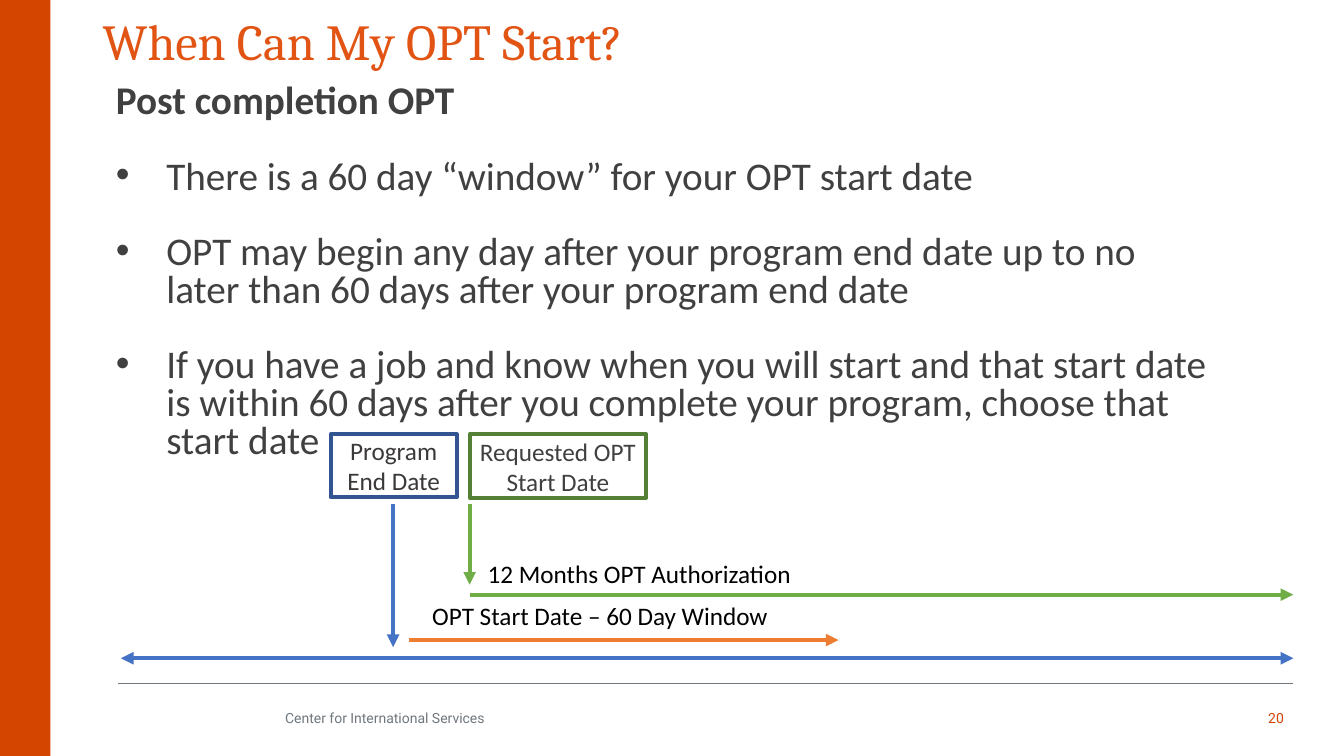
from dataclasses import dataclass

from lxml.etree import SubElement
from pptx import Presentation
from pptx.dml.color import RGBColor
from pptx.enum.shapes import MSO_CONNECTOR, MSO_SHAPE
from pptx.enum.text import MSO_ANCHOR, MSO_AUTO_SIZE, PP_ALIGN
from pptx.oxml.ns import qn
from pptx.util import Pt

HUES = {
    "band": "D44500", "title": "E25414", "ink": "404040", "dark": "3B3838",
    "gray": "6F777D", "black": "000000", "blue": "4472C4", "navy": "325491",
    "orange": "ED7D31", "green": "70AD47", "moss": "538035",
}


@dataclass
class Line:
    start: tuple[float, float]
    end: tuple[float, float]
    hue: str
    width: float = 3
    ends: tuple[str, ...] = ("tailEnd",)


@dataclass
class Box:
    area: tuple[float, float, float, float]
    text: str
    edge: str
    hue: str


@dataclass
class Label:
    area: tuple[float, float, float, float]
    text: str
    size: float = 18
    font: str = "Calibri"
    hue: str = "black"
    align: PP_ALIGN = PP_ALIGN.LEFT
    anchor: MSO_ANCHOR = MSO_ANCHOR.TOP


LIST = [
    "There is a 60 day “window” for your OPT start date",
    "OPT may begin any day after your program end date up to no later than "
    "60 days after your program end date",
    "If you have a job and know when you will start and that start date is "
    "within 60 days after you complete your program, choose that start date",
]
LEFT, RIGHT, OPT = 86.4, 923.8, 335.5
LINES = [
    Line((84.2, 488.2), (RIGHT, 488.2), "gray", 0.5, ()),
    Line((LEFT, 470.2), (RIGHT, 470.2), "blue", ends=("headEnd", "tailEnd")),
    Line((280.8, 360), (280.8, 462.2), "blue"),
    Line((292.3, 457.2), (599, 457.2), "orange"),
    Line((OPT, 360), (OPT, 417.6), "green"),
    Line((OPT, 424.8), (RIGHT, 424.8), "green"),
]
BOXES = [
    Box((236.2, 310.3, 90, 44.8), "Program End Date", "navy", "dark"),
    Box((OPT, 310.3, 126, 45.3), "Requested OPT Start Date", "moss", "ink"),
]
LABELS = [
    Label((301.7, 425.5, 288, 29), "OPT Start Date – 60 Day Window"),
    Label((341.3, 395.3, 343, 29), "12 Months OPT Authorization"),
    Label((196.6, 498.2, 679.7, 28.8), "Center for International Services",
          10, "Roboto", "gray", anchor=MSO_ANCHOR.MIDDLE),
    Label((876.2, 498.2, 48, 28.8), "20", 10, "Roboto", "band",
          PP_ALIGN.RIGHT, MSO_ANCHOR.MIDDLE),
]


def tint(name: str) -> RGBColor:
    return RGBColor.from_string(HUES[name])


def write(para, text: str, *, size: float, hue: str, font: str = "Calibri",
          bold: bool = False, align=PP_ALIGN.LEFT, lead: float = 1,
          before: float = 0, bullet: bool | None = None) -> None:
    """Fill a paragraph; bullet None leaves its list style alone."""
    para.alignment, para.line_spacing = align, lead
    para.space_before = Pt(before)
    if bullet is not None:
        props = para._p.get_or_add_pPr()
        indent = Pt(36) if bullet else 0
        props.set("marL", str(indent))
        props.set("indent", str(-indent))
        if bullet:
            SubElement(props, qn("a:buFont"), typeface="Arial")
            SubElement(props, qn("a:buChar"), char="•")
        else:
            SubElement(props, qn("a:buNone"))
    run = para.add_run()
    run.text = text
    run.font.name, run.font.size, run.font.bold = font, Pt(size), bold
    run.font.color.rgb = tint(hue)


def place(shape, area: tuple[float, float, float, float]) -> None:
    shape.left, shape.top, shape.width, shape.height = map(Pt, area)


def setup(shape, anchor: MSO_ANCHOR = MSO_ANCHOR.TOP):
    """Prepare a text frame and return it."""
    frame = shape.text_frame
    frame.word_wrap, frame.auto_size = True, MSO_AUTO_SIZE.NONE
    frame.vertical_anchor = anchor
    return frame


def add_line(slide, line: Line) -> None:
    link = slide.shapes.add_connector(
        MSO_CONNECTOR.STRAIGHT, *map(Pt, line.start + line.end))
    link.line.width = Pt(line.width)
    link.line.color.rgb = tint(line.hue)
    for end in line.ends:
        SubElement(link.line._get_or_add_ln(), qn(f"a:{end}"), type="triangle")
    SubElement(link._element.spPr, qn("a:effectLst"))


def add_box(slide, box: Box) -> None:
    shape = slide.shapes.add_shape(MSO_SHAPE.RECTANGLE, *map(Pt, box.area))
    shape.shadow.inherit = False
    shape.fill.background()
    shape.line.color.rgb, shape.line.width = tint(box.edge), Pt(3)
    frame = setup(shape, MSO_ANCHOR.MIDDLE)
    frame.margin_left = frame.margin_right = Pt(5)
    write(frame.paragraphs[0], box.text, size=18, hue=box.hue,
          align=PP_ALIGN.CENTER)


def add_label(slide, label: Label) -> None:
    shape = slide.shapes.add_textbox(*map(Pt, label.area))
    frame = setup(shape, label.anchor)
    write(frame.paragraphs[0], label.text, size=label.size, hue=label.hue,
          font=label.font, align=label.align)


def add_band(slide) -> None:
    band = slide.shapes.add_shape(MSO_SHAPE.RECTANGLE, 0, 0, Pt(36), Pt(540))
    band.shadow.inherit = False
    band.fill.solid()
    band.fill.fore_color.rgb = tint("band")
    band.line.fill.background()


def fill_text(slide) -> None:
    """Fill the title and the list placeholders."""
    title, body = slide.shapes.title, slide.placeholders[1]
    place(title, (66.2, 3.6, 791.3, 66.2))
    write(setup(title).paragraphs[0], "When Can My OPT Start?",
          size=36, hue="title", font="Cambria")
    place(body, (75.6, 56.9, 800.6, 278.6))
    frame = setup(body)
    write(frame.paragraphs[0], "Post completion OPT", size=28, hue="ink",
          bold=True, lead=0.8, bullet=False)
    for text in LIST:
        write(frame.add_paragraph(), text, size=28, hue="ink", lead=0.8,
              before=27, bullet=True)


def main() -> None:
    deck = Presentation()
    deck.slide_width, deck.slide_height = Pt(960), Pt(540)
    slide = deck.slides.add_slide(deck.slide_layouts[1])
    add_band(slide)
    fill_text(slide)
    for line in LINES:
        add_line(slide, line)
    for box in BOXES:
        add_box(slide, box)
    for label in LABELS:
        add_label(slide, label)
    deck.save("out.pptx")


if __name__ == "__main__":
    main()
